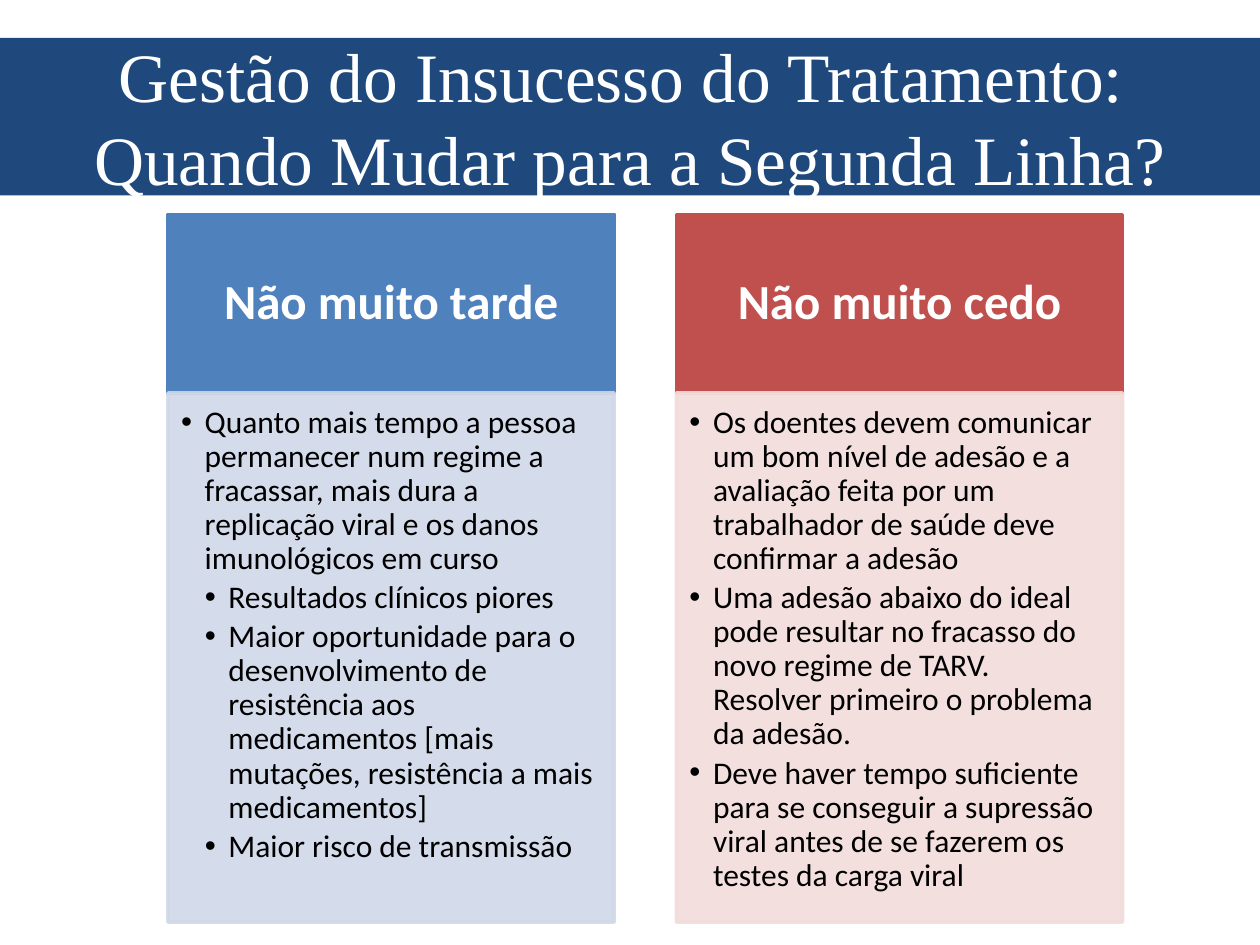
from dataclasses import dataclass

from lxml import etree
from pptx import Presentation
from pptx import util as u
from pptx.dml import color
from pptx.enum import shapes, text
from pptx.oxml import ns

COLUMN_LEFT, COLUMN_STEP, COLUMN_WIDTH = 96, 290.5, 255
HEADER_TOP, HEADER_HEIGHT, BODY_HEIGHT = 122.5, 102, 302.5
BULLET_INDENT = 13.5


@dataclass
class Bullet:
    wording: str
    level: int = 0


@dataclass
class Column:
    heading: str
    header_fill: str
    body_fill: str
    bullets: list[Bullet]


TITLE_LINES = ["Gestão do Insucesso do Tratamento: ", "Quando Mudar para a Segunda Linha?"]
COLUMNS = [
    Column("Não muito tarde", "4F81BD", "D0D8E8", [
        Bullet("Quanto mais tempo a pessoa permanecer num regime a fracassar, "
               "mais dura a replicação viral e os danos imunológicos em curso"),
        Bullet("Resultados clínicos piores", 1),
        Bullet("Maior oportunidade para o desenvolvimento de resistência aos "
               "medicamentos [mais mutações, resistência a mais medicamentos]", 1),
        Bullet("Maior risco de transmissão", 1),
    ]),
    Column("Não muito cedo", "C0504D", "F2DCDB", [
        Bullet("Os doentes devem comunicar um bom nível de adesão e a avaliação "
               "feita por um trabalhador de saúde deve confirmar a adesão"),
        Bullet("Uma adesão abaixo do ideal pode resultar no fracasso do novo "
               "regime de TARV. Resolver primeiro o problema da adesão."),
        Bullet("Deve haver tempo suficiente para se conseguir a supressão viral "
               "antes de se fazerem os testes da carga viral"),
    ]),
]


def paint(target, hex_color: str, opacity: int = 100) -> None:
    """Give a fill a solid colour, see-through when opacity is below 100."""
    target.solid()
    target.fore_color.rgb = color.RGBColor.from_string(hex_color)
    if opacity < 100:
        rgb = target._xPr.find(ns.qn("a:solidFill")).find(ns.qn("a:srgbClr"))
        etree.SubElement(rgb, ns.qn("a:alpha"), val=str(opacity * 1000))


def add_span(para, wording: str, size: float, font: str, hex_color: str,
             bold: bool = False) -> None:
    span = para.add_run()
    span.text = wording
    span.font.size = u.Pt(size)
    span.font.name = font
    span.font.bold = bold
    paint(span.font.fill, hex_color)


def add_box(page, left: float, top: float, height: float, fill: str,
            margins: tuple[float, ...], anchor, opacity: int = 100):
    box = page.shapes.add_shape(shapes.MSO_SHAPE.RECTANGLE, u.Pt(left), u.Pt(top),
                                u.Pt(COLUMN_WIDTH), u.Pt(height))
    box.shadow.inherit = False
    paint(box.fill, fill, opacity)
    box.line.width = u.Pt(2)
    paint(box.line.fill, fill, opacity)
    frame = box.text_frame
    frame.word_wrap = True
    frame.vertical_anchor = anchor
    (frame.margin_left, frame.margin_top,
     frame.margin_right, frame.margin_bottom) = map(u.Pt, margins)
    return frame


def add_bullet(para, bullet: Bullet) -> None:
    para.level = bullet.level
    para.alignment = text.PP_ALIGN.LEFT
    para.line_spacing = 0.9
    para.space_after = u.Pt(3)
    properties = para._p.get_or_add_pPr()
    properties.set("marL", str(u.Pt(BULLET_INDENT * (bullet.level + 1))))
    properties.set("indent", str(u.Pt(-BULLET_INDENT)))
    etree.SubElement(properties, ns.qn("a:buFont"), typeface="Arial")
    etree.SubElement(properties, ns.qn("a:buChar"), char="•")
    add_span(para, bullet.wording, 18, "Calibri", "000000")


def add_column(page, column: Column, left: float) -> None:
    # Coloured header
    header = add_box(page, left, HEADER_TOP, HEADER_HEIGHT, column.header_fill,
                     (16, 9, 16, 9), text.MSO_ANCHOR.MIDDLE)
    para = header.paragraphs[0]
    para.alignment = text.PP_ALIGN.CENTER
    para.line_spacing = 0.9
    add_span(para, column.heading, 28, "Calibri", "FFFFFF", bold=True)

    # Pale body with the bullets
    body = add_box(page, left, HEADER_TOP + HEADER_HEIGHT, BODY_HEIGHT, column.body_fill,
                   (7.5, 7.5, 10, 11.5), text.MSO_ANCHOR.TOP, opacity=90)
    for index, bullet in enumerate(column.bullets):
        add_bullet(body.add_paragraph() if index else body.paragraphs[0], bullet)


def add_title(page) -> None:
    title = page.shapes.title
    title.left, title.top, title.width, title.height = map(u.Pt, (0, 21.6, 720, 90))
    paint(title.fill, "1F497D")
    frame = title.text_frame
    frame.auto_size = text.MSO_AUTO_SIZE.NONE
    frame.vertical_anchor = text.MSO_ANCHOR.MIDDLE
    para = frame.paragraphs[0]
    para.alignment = text.PP_ALIGN.CENTER
    for index, line in enumerate(TITLE_LINES):
        if index:
            para.add_line_break()
        add_span(para, line, 39.6, "Times New Roman", "FFFFFF")


def main() -> None:
    deck = Presentation()
    deck.slide_width, deck.slide_height = u.Pt(720), u.Pt(540)
    page = deck.slides.add_slide(deck.slide_layouts[5])
    add_title(page)
    for index, column in enumerate(COLUMNS):
        add_column(page, column, COLUMN_LEFT + index * COLUMN_STEP)
    deck.save("out.pptx")


if __name__ == "__main__":
    main()
